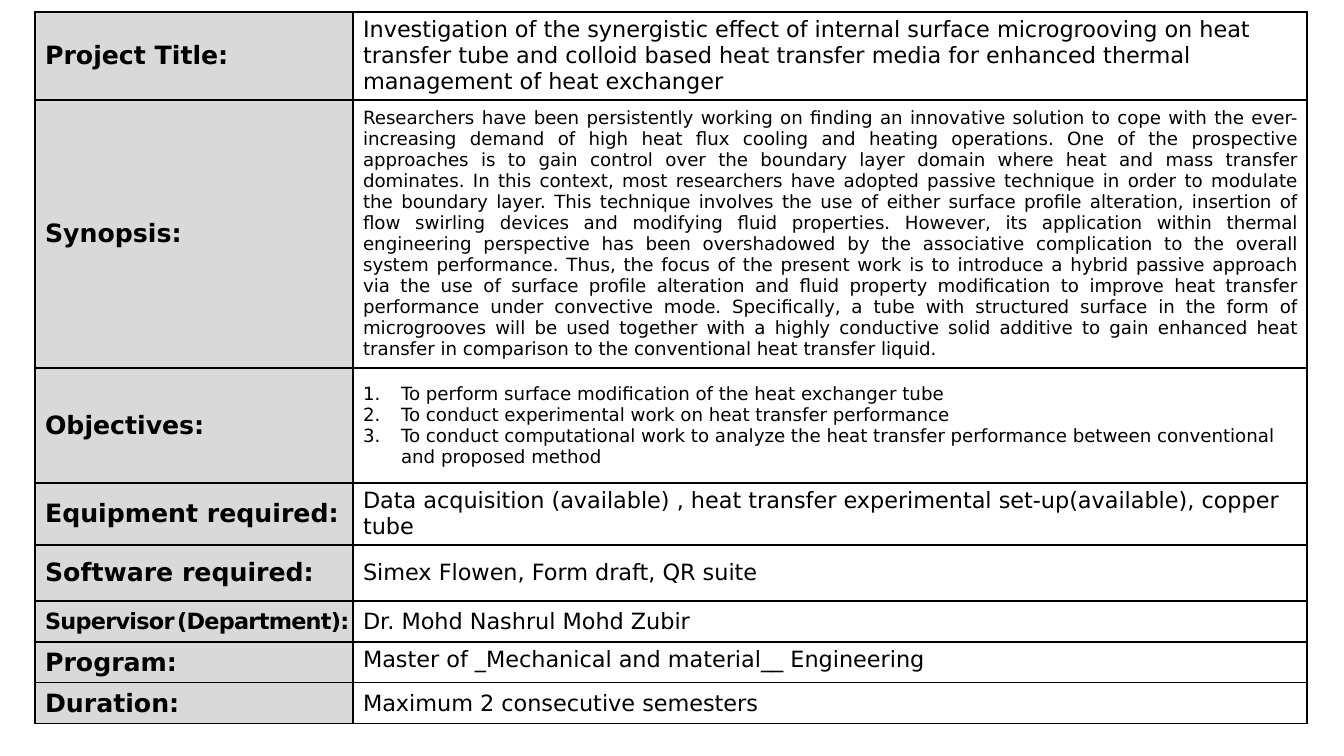
import pptx
import pptx.dml.color
import pptx.enum.text
import pptx.util
import pptx.oxml.ns
from lxml import etree

PX = 914400 / 100.8
FONT = "DejaVu Sans"
BLACK, GREY, WHITE = "000000", "D9D9D9", "FFFFFF"
ALIGN = pptx.enum.text.PP_ALIGN
ANCHOR = pptx.enum.text.MSO_ANCHOR
COLUMN_WIDTHS = [318, 954]

SYNOPSIS_SENTENCES = [
    "Researchers have been persistently working on finding an innovative solution to cope with "
    "the ever-increasing demand of high heat flux cooling and heating operations.",
    "One of the prospective approaches is to gain control over the boundary layer domain where "
    "heat and mass transfer dominates.",
    "In this context, most researchers have adopted passive technique in order to modulate the "
    "boundary layer.",
    "This technique involves the use of either surface profile alteration, insertion of flow "
    "swirling devices and modifying fluid properties.",
    "However, its application within thermal engineering perspective has been overshadowed by "
    "the associative complication to the overall system performance.",
    "Thus, the focus of the present work is to introduce a hybrid passive approach via the use "
    "of surface profile alteration and fluid property modification to improve heat transfer "
    "performance under convective mode.",
    "Specifically, a tube with structured surface in the form of microgrooves will be used "
    "together with a highly conductive solid additive to gain enhanced heat transfer in "
    "comparison to the conventional heat transfer liquid.",
]
OBJECTIVES = [
    "To perform surface modification of the heat exchanger tube",
    "To conduct experimental work on heat transfer performance",
    "To conduct computational work to analyze the heat transfer performance between "
    "conventional and proposed method",
]
TITLE = (
    "Investigation of the synergistic effect of internal surface microgrooving on heat transfer "
    "tube and colloid based heat transfer media for enhanced thermal management of heat exchanger"
)
EQUIPMENT = (
    "Data acquisition (available) , heat transfer experimental set-up(available), copper tube"
)
SUPERVISOR_LABEL = [("Supervisor", 16), (" ", 5), ("(Department):", 16)]

ROWS = [
    (88, "Project Title:", [TITLE], {}),
    (268, "Synopsis:", [" ".join(SYNOPSIS_SENTENCES)], {"size": 13, "align": ALIGN.JUSTIFY}),
    (115, "Objectives:", OBJECTIVES, {"size": 13, "numbered": True}),
    (62, "Equipment required:", [EQUIPMENT], {}),
    (56, "Software required:", ["Simex Flowen, Form draft, QR suite"], {}),
    (41, SUPERVISOR_LABEL, ["Dr. Mohd Nashrul Mohd Zubir"], {}),
    (41, "Program:", ["Master of _Mechanical and material__ Engineering"],
     {"anchor": ANCHOR.TOP}),
    (41, "Duration:", ["Maximum 2 consecutive semesters"], {}),
]


def px(n):
    return pptx.util.Emu(round(n * PX))


def rgb(value):
    return pptx.dml.color.RGBColor.from_string(value)


def add_xml(parent, tag, **attrs):
    return etree.SubElement(parent, pptx.oxml.ns.qn(tag), **attrs)


def set_font(font, size, bold):
    font.name = FONT
    font.size = pptx.util.Pt(size)
    font.bold = bold
    font.color.rgb = rgb(BLACK)


def style_cell(cell, fill, anchor=ANCHOR.MIDDLE):
    cell.vertical_anchor = anchor
    tcPr = cell._tc.get_or_add_tcPr()
    for side in ("a:lnL", "a:lnR", "a:lnT", "a:lnB"):
        ln = add_xml(tcPr, side, w="12700")
        add_xml(add_xml(ln, "a:solidFill"), "a:srgbClr", val=BLACK)
    cell.fill.solid()
    cell.fill.fore_color.rgb = rgb(fill)


def number_paragraph(p):
    pPr = p._p.get_or_add_pPr()
    pPr.set("marL", str(px(38)))
    pPr.set("indent", str(-px(38)))
    add_xml(pPr, "a:buFont", typeface="+mj-lt")
    add_xml(pPr, "a:buAutoNum", type="arabicPeriod")


def write_paragraphs(cell, texts, size=16, bold=False, align=ALIGN.LEFT, numbered=False):
    tf = cell.text_frame
    for i, text in enumerate(texts):
        p = tf.add_paragraph() if i else tf.paragraphs[0]
        p.text = text
        p.alignment = align
        if numbered:
            number_paragraph(p)
        set_font(p.font, size, bold)


def write_condensed(cell, runs):
    cell.margin_right = 0
    p = cell.text_frame.paragraphs[0]
    for text, size in runs:
        r = p.add_run()
        r.text = text
        set_font(r.font, size, True)
        r._r.get_or_add_rPr().set("spc", "-50")


def fill_row(table, index, label, texts, anchor=ANCHOR.MIDDLE, **style):
    heading, body = table.cell(index, 0), table.cell(index, 1)
    style_cell(heading, GREY)
    style_cell(body, WHITE, anchor)
    if isinstance(label, str):
        write_paragraphs(heading, [label], size=18, bold=True)
    else:
        write_condensed(heading, label)
    write_paragraphs(body, texts, **style)


def add_project_table(s):
    heights = [row[0] for row in ROWS]
    frame = s.shapes.add_table(len(ROWS), len(COLUMN_WIDTHS), px(35), px(12),
                               px(sum(COLUMN_WIDTHS)), px(sum(heights)))
    table = frame.table
    table.first_row = False
    table.horz_banding = False
    for column, width in zip(table.columns, COLUMN_WIDTHS):
        column.width = px(width)
    for i, (height, label, texts, style) in enumerate(ROWS):
        table.rows[i].height = px(height)
        fill_row(table, i, label, texts, **style)


def main():
    prs = pptx.Presentation()
    prs.slide_width = px(1344)
    prs.slide_height = px(756)
    s = prs.slides.add_slide(prs.slide_layouts[6])
    add_project_table(s)
    prs.save("out.pptx")


if __name__ == "__main__":
    main()
